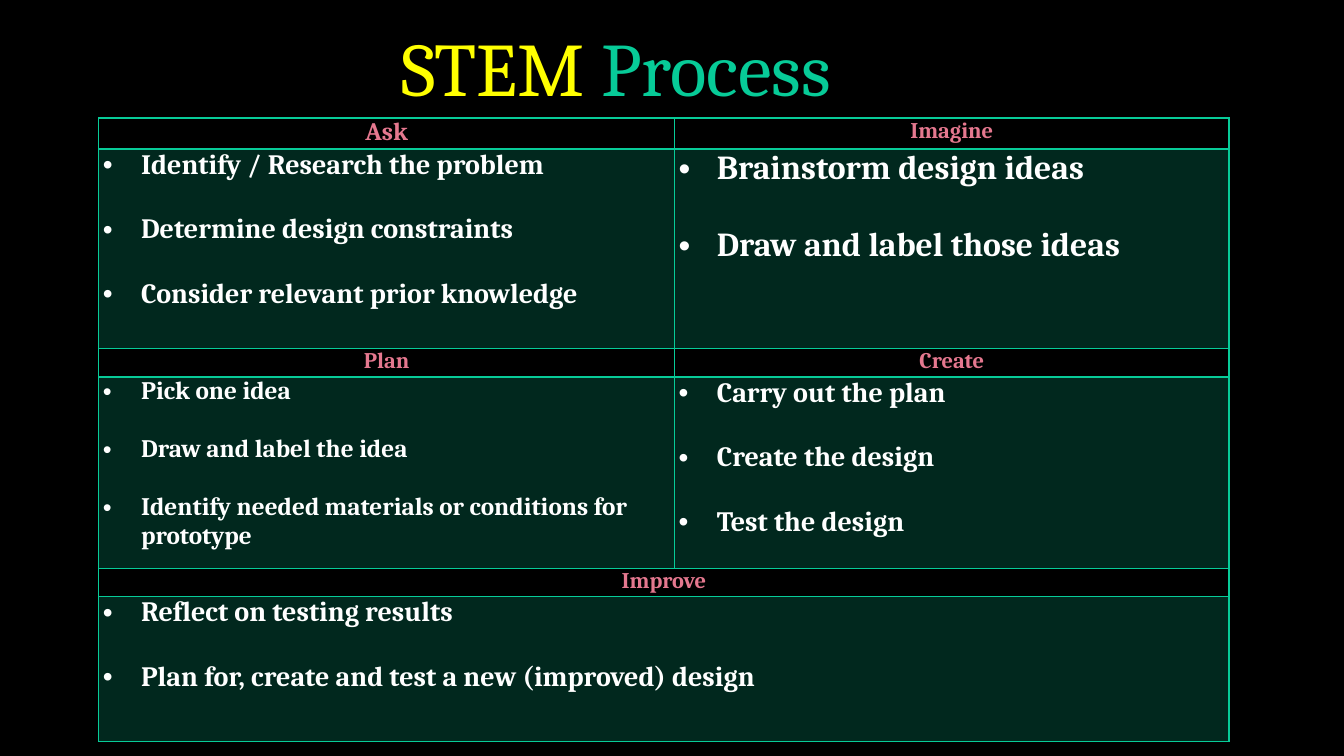
from lxml.etree import SubElement
from pptx import Presentation
from pptx.dml.color import RGBColor
from pptx.enum.text import MSO_ANCHOR, MSO_AUTO_SIZE, PP_ALIGN
from pptx.oxml import parse_xml
from pptx.oxml.ns import nsdecls, qn
from pptx.util import Pt

PX = 9144
GREEN, YELLOW, PINK, WHITE, BLACK = "07CB98", "FFFF00", "E5788F", "FFFFFF", "000000"


def rgb(value):
    return RGBColor.from_string(value)


def style(font, size, color, bold):
    font.name = "Cambria"
    font.size = Pt(size)
    font.bold = bold
    font.color.rgb = rgb(color)


prs = Presentation()
prs.slide_width, prs.slide_height = 1333 * PX, 750 * PX
slide = prs.slides.add_slide(prs.slide_layouts[5])
slide.background.fill.solid()
slide.background.fill.fore_color.rgb = rgb(BLACK)

title = slide.shapes.title
title.left, title.top, title.width, title.height = 86 * PX, 0, 1050 * PX, 117 * PX
title.text_frame.auto_size = MSO_AUTO_SIZE.NONE
title.text_frame.vertical_anchor = MSO_ANCHOR.BOTTOM
heading = title.text_frame.paragraphs[0]
heading.alignment = PP_ALIGN.CENTER
heading.line_spacing = 0.9
for word, color in (("STEM", YELLOW), (" Process", GREEN)):
    run = heading.add_run()
    run.text = word
    style(run.font, 54, color, False)

steps = [
    (0, 0, "Ask", 18, 20, ["Identify / Research the problem", "Determine design constraints",
                           "Consider relevant prior knowledge"]),
    (0, 1, "Imagine", 16, 24, ["Brainstorm design ideas", "Draw and label those ideas"]),
    (2, 0, "Plan", 16, 18, ["Pick one idea", "Draw and label the idea",
                            "Identify needed materials or conditions for prototype"]),
    (2, 1, "Create", 16, 20, ["Carry out the plan", "Create the design", "Test the design"]),
    (4, 0, "Improve", 16, 20, ["Reflect on testing results",
                               "Plan for, create and test a new (improved) design"]),
]
column_widths = [571, 550]
row_heights = [31, 198, 28, 190, 28, 144]

process = slide.shapes.add_table(
    len(row_heights), len(column_widths), 98 * PX, 117 * PX,
    sum(column_widths) * PX, sum(row_heights) * PX).table
process.first_row = process.horz_banding = False
for column, width in zip(process.columns, column_widths):
    column.width = width * PX
for row, height in zip(process.rows, row_heights):
    row.height = height * PX

for r in range(len(row_heights)):
    for c in range(len(column_widths)):
        cell = process.cell(r, c)
        cell.margin_left = cell.margin_right = 4 * PX
        cell.margin_top = cell.margin_bottom = 0
        for side in "LRTB":
            weight = 2 if (r, side) in ((0, "B"), (1, "T")) else 1
            cell._tc.tcPr.append(parse_xml(
                f'<a:ln{side} {nsdecls("a")} w="{Pt(weight)}"><a:solidFill>'
                f'<a:srgbClr val="{GREEN}"/></a:solidFill></a:ln{side}>'))
        if r % 2:
            cell.fill.solid()
            cell.fill.fore_color.rgb = rgb(GREEN)
            tint = cell._tc.tcPr.find(qn("a:solidFill")).find(qn("a:srgbClr"))
            SubElement(tint, qn("a:alpha")).set("val", "20000")
        else:
            cell.fill.background()

for r in (4, 5):
    process.cell(r, 0).merge(process.cell(r, 1))

for r, c, name, name_size, item_size, items in steps:
    label = process.cell(r, c).text_frame.paragraphs[0]
    label.text = name
    label.alignment = PP_ALIGN.CENTER
    style(label.runs[0].font, name_size, PINK, True)

    frame = process.cell(r + 1, c).text_frame
    for i, item in enumerate(items):
        paragraph = frame.add_paragraph() if i else frame.paragraphs[0]
        paragraph.text = item
        properties = paragraph._p.get_or_add_pPr()
        properties.set("marL", str(38 * PX))
        properties.set("indent", str(-38 * PX))
        SubElement(properties, qn("a:buFont")).set("typeface", "Arial")
        SubElement(properties, qn("a:buChar")).set("char", "•")
        if i:
            paragraph.space_before = Pt(item_size * 1.15)
        style(paragraph.runs[0].font, item_size, WHITE, True)

prs.save("out.pptx")
